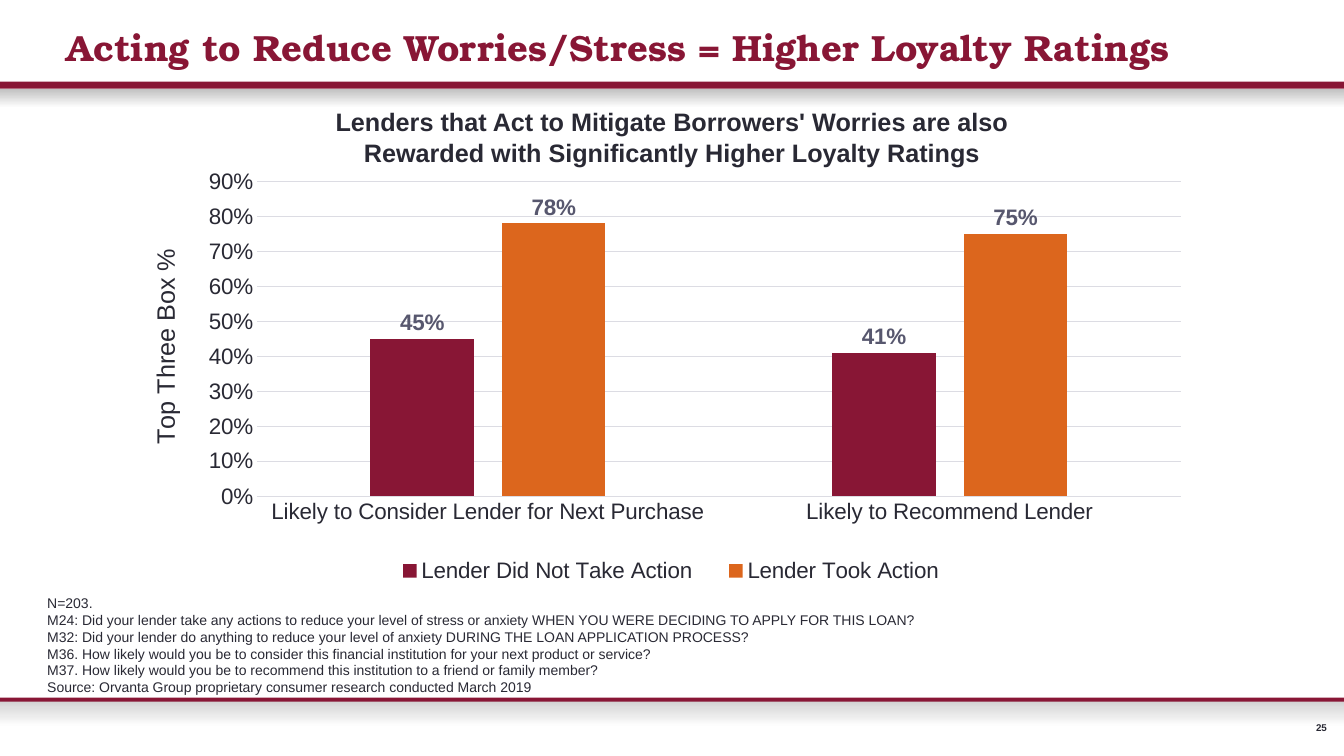
from dataclasses import dataclass
from lxml.etree import SubElement
from pptx import Presentation
from pptx.chart.data import CategoryChartData
from pptx.dml.color import RGBColor
from pptx.enum.chart import XL_CHART_TYPE as ChartType
from pptx.enum.chart import XL_LABEL_POSITION as LabelPosition
from pptx.enum.chart import XL_LEGEND_POSITION as LegendPosition
from pptx.enum.chart import XL_TICK_MARK as TickMark
from pptx.enum.shapes import MSO_SHAPE as Shape
from pptx.enum.text import MSO_ANCHOR as Anchor
from pptx.enum.text import PP_ALIGN as Align
from pptx.oxml.ns import qn
from pptx.util import Inches, Pt


@dataclass(frozen=True)
class Theme:
    maroon: str = "881635"
    orange: str = "DC661D"
    ink: str = "292934"
    label: str = "57576E"
    grid: str = "DCDCE3"
    shade: str = "C0C0C0"
    light_shade: str = "CFCFCF"
    white: str = "FFFFFF"
    body_font: str = "Arial"
    title_font: str = "TeX Gyre Bonum"
    title_size: float = 26
    heading_size: float = 18
    chart_size: float = 16
    note_size: float = 10
    number_size: float = 7


THEME = Theme()
SLIDE_WIDTH = 13.33
TITLE = "Acting to Reduce Worries/Stress = Higher Loyalty Ratings"
HEADING = ("Lenders that Act to Mitigate Borrowers' Worries are also "
           "Rewarded with Significantly Higher Loyalty Ratings")
NOTES = [
    "N=203.",
    "M24: Did your lender take any actions to reduce your level of stress or anxiety "
    "WHEN YOU WERE DECIDING TO APPLY FOR THIS LOAN?",
    "M32: Did your lender do anything to reduce your level of anxiety "
    "DURING THE LOAN APPLICATION PROCESS?",
    "M36. How likely would you be to consider this financial institution "
    "for your next product or service?",
    "M37. How likely would you be to recommend this institution to a friend or family member?",
    "Source: Orvanta Group proprietary consumer research conducted March 2019",
]
CATEGORIES = ["Likely to Consider Lender for Next Purchase", "Likely to Recommend Lender"]
SERIES = [
    ("Lender Did Not Take Action", [0.45, 0.41], THEME.maroon),
    ("Lender Took Action", [0.78, 0.75], THEME.orange),
]


def color(code):
    return RGBColor.from_string(code)


def style_font(font, size, code=THEME.ink, bold=False, name=THEME.body_font):
    font.name = name
    font.size = Pt(size)
    font.bold = bold
    font.color.rgb = color(code)


def add_band(page, top, height, *codes):
    band = page.shapes.add_shape(
        Shape.RECTANGLE, 0, Inches(top), Inches(SLIDE_WIDTH), Inches(height))
    band.shadow.inherit = False
    band.line.fill.background()
    if len(codes) == 1:
        band.fill.solid()
        band.fill.fore_color.rgb = color(codes[0])
        return
    band.fill.gradient()
    band.fill.gradient_angle = 270
    for stop, code in zip(band.fill.gradient_stops, codes):
        stop.color.rgb = color(code)


def set_title(page, text, area):
    title = page.shapes.title
    title.left, title.top, title.width, title.height = map(Inches, area)
    frame = title.text_frame
    frame.text = text
    frame.vertical_anchor = Anchor.MIDDLE
    para = frame.paragraphs[0]
    para.alignment = Align.LEFT
    style_font(para.runs[0].font, THEME.title_size, THEME.maroon, True, THEME.title_font)


def add_text(page, lines, area, size, align=Align.LEFT, bold=False):
    box = page.shapes.add_textbox(*map(Inches, area))
    frame = box.text_frame
    frame.word_wrap = True
    frame.text = "\n".join(lines)
    for para in frame.paragraphs:
        para.alignment = align
        for span in para.runs:
            style_font(span.font, size, bold=bold)
    return frame


def add_page_number(page, number):
    frame = add_text(page, [number], (12.86, 7.16, 0.3, 0.12),
                     THEME.number_size, Align.RIGHT, True)
    frame.margin_left = frame.margin_right = frame.margin_top = frame.margin_bottom = 0
    frame.vertical_anchor = Anchor.MIDDLE


def place_part(part, position, inner, **fractions):
    for old in part.findall(qn("c:layout")):
        part.remove(old)
    layout = SubElement(part, qn("c:layout"))
    part.insert(position, layout)
    manual = SubElement(layout, qn("c:manualLayout"))
    if inner:
        SubElement(manual, qn("c:layoutTarget"), val="inner")
    for side in ("x", "y"):
        SubElement(manual, qn(f"c:{side}Mode"), val="edge")
    for side, fraction in fractions.items():
        SubElement(manual, qn(f"c:{side}"), val=str(fraction))


def style_axes(chart):
    for axis in (chart.category_axis, chart.value_axis):
        axis.major_tick_mark = axis.minor_tick_mark = TickMark.NONE
        style_font(axis.tick_labels.font, THEME.chart_size)
    grid = chart.value_axis.major_gridlines.format.line
    for line in (chart.category_axis.format.line, grid):
        line.color.rgb = color(THEME.grid)
        line.width = Pt(0.75)
    values = chart.value_axis
    values.format.line.fill.background()
    values.minimum_scale, values.maximum_scale, values.major_unit = 0, 0.9, 0.1
    values.tick_labels.number_format = "0%"
    values.tick_labels.number_format_is_linked = False
    frame = values.axis_title.text_frame
    frame.text = "Top Three Box %"
    style_font(frame.paragraphs[0].runs[0].font, THEME.heading_size)
    body = values.axis_title._element.find(".//" + qn("a:bodyPr"))
    body.set("rot", "-5400000")
    body.set("vert", "horz")


def style_series(plot):
    plot.gap_width = 219
    plot.overlap = -27
    plot.vary_by_categories = False
    for series, (_, _, code) in zip(plot.series, SERIES):
        series.format.fill.solid()
        series.format.fill.fore_color.rgb = color(code)
        labels = series.data_labels
        labels.show_value = True
        labels.number_format = "0%"
        labels.number_format_is_linked = False
        labels.position = LabelPosition.OUTSIDE_END
        style_font(labels.font, THEME.chart_size, THEME.label, True)


def add_loyalty_chart(page, area):
    data = CategoryChartData(number_format="0%")
    data.categories = CATEGORIES
    for name, values, _ in SERIES:
        data.add_series(name, values)
    chart = page.shapes.add_chart(
        ChartType.COLUMN_CLUSTERED, *map(Inches, area), data).chart
    chart.has_title = False
    style_font(chart.font, THEME.note_size)
    style_axes(chart)
    style_series(chart.plots[0])
    chart.has_legend = True
    legend = chart.legend
    legend.position = LegendPosition.BOTTOM
    legend.include_in_layout = False
    style_font(legend.font, THEME.chart_size)
    plot_area = chart._chartSpace.chart.plotArea
    place_part(plot_area, 0, True, x=0.11, y=0.16, w=0.87, h=0.61)
    place_part(legend._element, 1, False, x=0.22, y=0.88, w=0.56, h=0.07)


def main():
    deck = Presentation()
    deck.slide_width, deck.slide_height = Inches(SLIDE_WIDTH), Inches(7.5)
    page = deck.slides.add_slide(deck.slide_layouts[5])
    add_band(page, 6.94, 0.27, THEME.light_shade, THEME.white)
    add_band(page, 0.88, 0.19, THEME.shade, THEME.white)
    add_band(page, 6.92, 0.04, THEME.maroon)
    add_band(page, 0.81, 0.07, THEME.maroon)
    add_page_number(page, "25")
    set_title(page, TITLE, (0.56, 0.2, 12.77, 0.54))
    add_loyalty_chart(page, (1.39, 0.98, 10.53, 5.12))
    add_text(page, NOTES, (0.37, 5.85, 9.09, 1.11), THEME.note_size)
    add_text(page, [HEADING], (2.68, 1.01, 7.97, 0.71),
             THEME.heading_size, Align.CENTER, True)
    deck.save("out.pptx")


if __name__ == "__main__":
    main()
